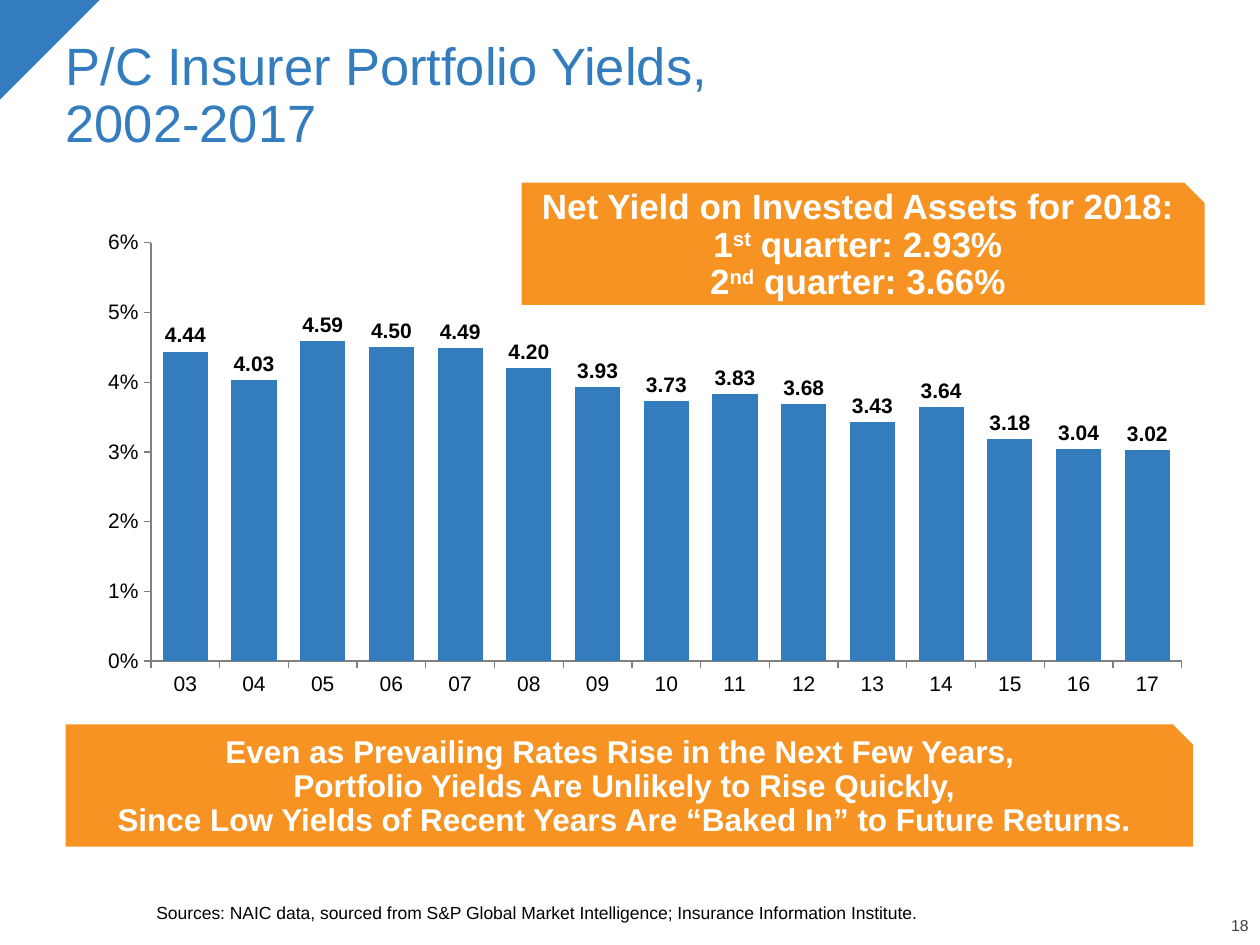
from lxml.etree import SubElement
from pptx import Presentation
from pptx.chart.data import CategoryChartData
from pptx.dml.color import RGBColor
from pptx.enum.chart import XL_CHART_TYPE, XL_LABEL_POSITION, XL_TICK_MARK
from pptx.enum.shapes import MSO_SHAPE
from pptx.enum.text import MSO_ANCHOR, PP_ALIGN
from pptx.oxml.ns import qn
from pptx.util import Inches, Pt

COLORS = {"blue": "337DBE", "orange": "F69322", "white": "FFFFFF",
          "black": "000000", "gray": "404040", "axis": "808080"}
FONT = "Arial"


def rgb(name):
    return RGBColor.from_string(COLORS[name])


class YieldSlide:
    """House style together with the slide being built."""

    def __init__(self, prs):
        self.slide = prs.slides.add_slide(prs.slide_layouts[1])
        self.title, self.body = self.slide.placeholders

    def place(self, shape, box):
        shape.left, shape.top, shape.width, shape.height = map(Inches, box)

    def style_font(self, font, size, color, bold=False):
        font.name, font.size, font.bold = FONT, Pt(size), bold
        font.color.rgb = rgb(color)

    def set_lines(self, shape, lines, size, color, bold=False, align=PP_ALIGN.LEFT,
                  anchor=MSO_ANCHOR.MIDDLE, insets=(0, 0, 0, 0)):
        """Each line is a tuple of parts; every second part is superscript."""
        frame = shape.text_frame
        frame.word_wrap = True
        frame.vertical_anchor = anchor
        (frame.margin_left, frame.margin_top,
         frame.margin_right, frame.margin_bottom) = map(Inches, insets)
        paragraph = frame.paragraphs[0]
        paragraph.alignment = align
        paragraph.line_spacing = 0.9
        paragraph.space_before = Pt(0)
        for row, parts in enumerate(lines):
            if row:
                paragraph.add_line_break()
            for index, part in enumerate(parts):
                run = paragraph.add_run()
                run.text = part
                self.style_font(run.font, size, color, bold)
                if index % 2:
                    run._r.get_or_add_rPr().set("baseline", "30000")
        for line_break in paragraph._p.findall(qn("a:br")):
            SubElement(line_break, qn("a:rPr")).set("sz", str(size * 100))

    def heading(self, box, lines):
        self.place(self.title, box)
        self.set_lines(self.title, lines, 30, "blue", insets=(0.1, 0.05, 0.1, 0.05))

    def source_note(self, box, text):
        self.place(self.body, box)
        props = self.body.text_frame.paragraphs[0]._p.get_or_add_pPr()
        props.set("marL", "0")
        props.set("indent", "0")
        SubElement(props, qn("a:buNone"))
        self.set_lines(self.body, [(text,)], 10, "black", anchor=MSO_ANCHOR.BOTTOM)

    def page_number(self, box, text):
        number = self.slide.shapes.add_textbox(*map(Inches, box))
        self.set_lines(number, [(text,)], 9, "gray", align=PP_ALIGN.RIGHT,
                       anchor=MSO_ANCHOR.BOTTOM)

    def block(self, preset, box, color):
        block = self.slide.shapes.add_shape(preset, *map(Inches, box))
        block.shadow.inherit = False
        block.fill.solid()
        block.fill.fore_color.rgb = rgb(color)
        block.line.fill.background()
        return block

    def corner(self, box):
        self.block(MSO_SHAPE.RIGHT_TRIANGLE, box, "blue").rotation = 90

    def callout(self, box, lines, size):
        callout = self.block(MSO_SHAPE.SNIP_1_RECTANGLE, box, "orange")
        self.set_lines(callout, lines, size, "white", bold=True,
                       align=PP_ALIGN.CENTER, insets=(0.1, 0.05, 0.1, 0.1))

    def column_chart(self, box, categories, values, plot_area):
        data = CategoryChartData()
        data.categories = categories
        data.add_series("Series 1", values)
        chart = self.slide.shapes.add_chart(
            XL_CHART_TYPE.COLUMN_CLUSTERED, *map(Inches, box), data).chart
        chart.has_legend = chart.has_title = False
        self.style_font(chart.font, 18, "black")

        # Columns and their labels
        plot = chart.plots[0]
        plot.gap_width = 52
        plot.vary_by_categories = False
        fill = plot.series[0].format.fill
        fill.solid()
        fill.fore_color.rgb = rgb("blue")
        plot.has_data_labels = True
        labels = plot.data_labels
        labels.show_value = True
        labels.position = XL_LABEL_POSITION.OUTSIDE_END
        labels.number_format = "#,##0.00"
        labels.number_format_is_linked = False
        self.style_font(labels.font, 12, "black", bold=True)

        # Axes
        for axis in (chart.category_axis, chart.value_axis):
            axis.has_major_gridlines = False
            axis.major_tick_mark = XL_TICK_MARK.OUTSIDE
            axis.minor_tick_mark = XL_TICK_MARK.NONE
            axis.format.line.color.rgb = rgb("axis")
            self.style_font(axis.tick_labels.font, 12, "black")
        percent = chart.value_axis
        percent.minimum_scale, percent.maximum_scale = 0, 6
        percent.major_unit = 1
        percent.tick_labels.number_format = '0"%"'
        percent.tick_labels.number_format_is_linked = False

        # Fixed inner plot area
        area = chart._chartSpace.chart.plotArea
        for old in area.findall(qn("c:layout")):
            area.remove(old)
        layout = SubElement(area, qn("c:layout"))
        area.insert(0, layout)
        manual = SubElement(layout, qn("c:manualLayout"))
        settings = [("layoutTarget", "inner"), ("xMode", "edge"), ("yMode", "edge")]
        settings += zip("xywh", plot_area)
        for tag, value in settings:
            SubElement(manual, qn(f"c:{tag}")).set("val", str(value))


def main():
    prs = Presentation()
    prs.slide_width, prs.slide_height = Inches(10), Inches(7.5)
    page = YieldSlide(prs)

    # Page furniture
    page.corner((-0.01, 0, 0.8, 0.8))
    page.page_number((9.43, 7.29, 0.48, 0.13), "18")

    # Title and sources
    page.heading((0.42, 0.25, 9.25, 1.04),
                 [("P/C Insurer Portfolio Yields,",), ("2002-2017",)])
    page.source_note((1.24, 6.88, 8.4, 0.45),
                     "Sources: NAIC data, sourced from S&P Global Market "
                     "Intelligence; Insurance Information Institute.")

    # Yields by year
    years = [f"{year:02}" for year in range(3, 18)]
    yields = [4.44, 4.03, 4.59, 4.5, 4.49, 4.2, 3.93, 3.73,
              3.83, 3.68, 3.43, 3.64, 3.18, 3.04, 3.02]
    page.column_chart((0.34, 1.62, 9.13, 4.45), years, yields,
                      (0.094, 0.069, 0.896, 0.746))

    # Callouts
    page.callout((0.52, 5.75, 8.95, 0.97), [
        ("Even as Prevailing Rates Rise in the Next Few Years, ",),
        ("Portfolio Yields Are Unlikely to Rise Quickly,",),
        ("Since Low Yields of Recent Years Are “Baked In” to Future Returns.",),
    ], 18)
    page.callout((4.14, 1.45, 5.42, 0.97), [
        ("Net Yield on Invested Assets for 2018:",),
        ("1", "st", " quarter: 2.93%"),
        ("2", "nd", " quarter: 3.66%"),
    ], 20)

    prs.save("out.pptx")


if __name__ == "__main__":
    main()
